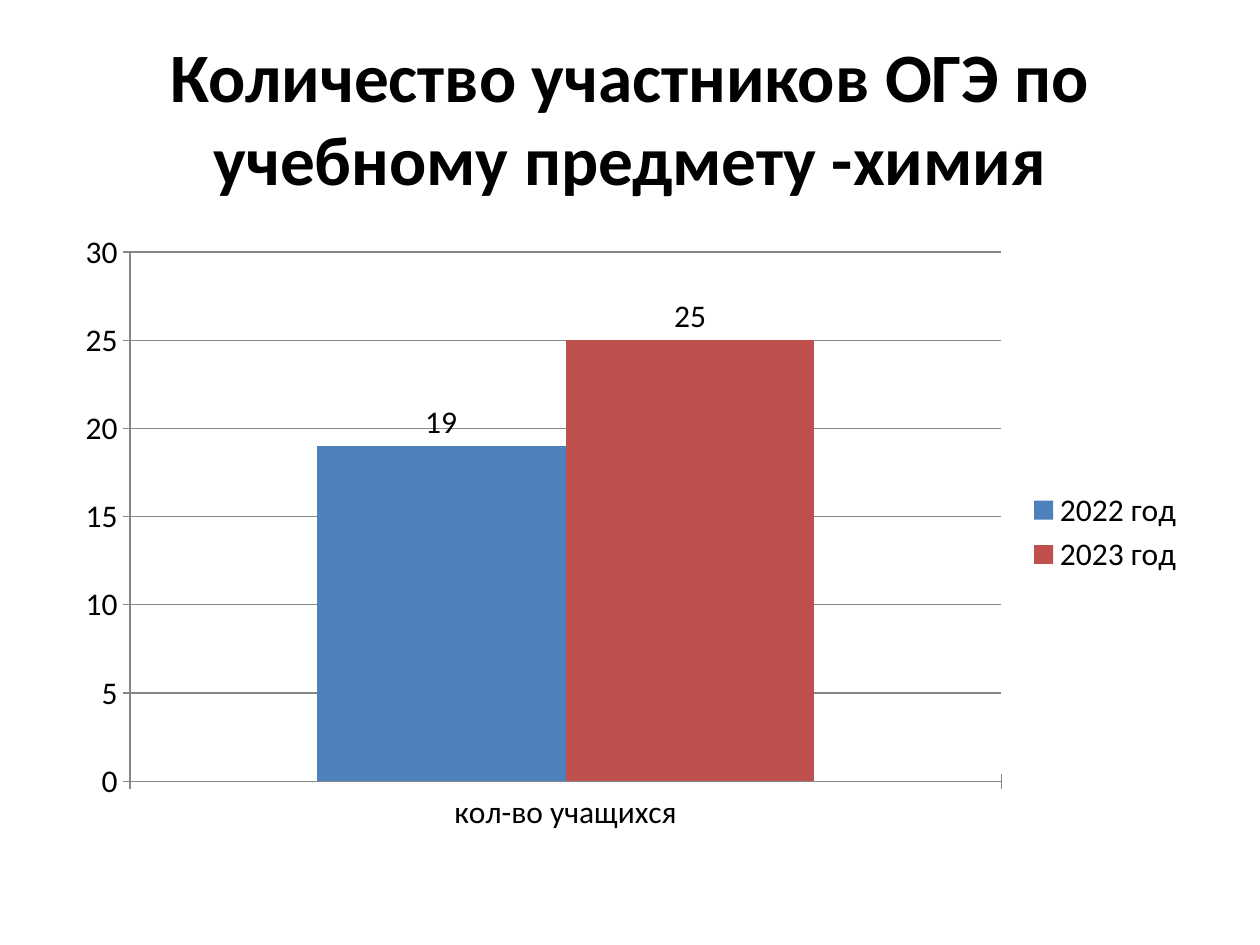
from dataclasses import dataclass
from typing import Any

from pptx import Presentation
from pptx import util as u
from pptx.chart.data import CategoryChartData
from pptx.dml.color import RGBColor
from pptx.enum import chart as ce
from pptx.enum import text

BLACK = RGBColor(0x00, 0x00, 0x00)
GRAY = RGBColor(0x86, 0x86, 0x86)
BLUE = RGBColor(0x4F, 0x81, 0xBD)
RED = RGBColor(0xC0, 0x50, 0x4D)

WIDTH, HEIGHT = u.Inches(10), u.Inches(7.5)
FONT = "Calibri"


@dataclass(frozen=True)
class Area:
    left: float
    top: float
    width: float
    height: float

    def lengths(self) -> dict[str, int]:
        return {
            "left": round(self.left * WIDTH),
            "top": round(self.top * HEIGHT),
            "width": round(self.width * WIDTH),
            "height": round(self.height * HEIGHT),
        }


@dataclass(frozen=True)
class Year:
    name: str
    count: int
    color: RGBColor


TITLE_AREA = Area(0.05, 0.04, 0.9, 1 / 6)
CHART_AREA = Area(0.05, 7 / 30, 0.9, 0.66)
YEARS = [Year("2022 год", 19, BLUE), Year("2023 год", 25, RED)]


def apply(target: Any, values: dict[str, Any]) -> None:
    for name, value in values.items():
        setattr(target, name, value)


def format_font(font: Any, size: float, bold: bool = False) -> None:
    apply(font, {"name": FONT, "size": u.Pt(size), "bold": bold})
    font.color.rgb = BLACK


def format_line(line: Any) -> None:
    line.color.rgb = GRAY
    line.width = u.Pt(0.75)


def write_title(page: Any, words: str) -> None:
    box = page.shapes.title
    apply(box, TITLE_AREA.lengths())
    apply(box.text_frame, {
        "text": words,
        "word_wrap": True,
        "auto_size": text.MSO_AUTO_SIZE.NONE,
        "vertical_anchor": text.MSO_ANCHOR.MIDDLE,
    })
    para = box.text_frame.paragraphs[0]
    para.alignment = text.PP_ALIGN.CENTER
    format_font(para.runs[0].font, 39.6, bold=True)


def draw_chart(page: Any, category: str, years: list[Year]) -> None:
    data = CategoryChartData()
    data.categories = [category]
    for year in years:
        data.add_series(year.name, [year.count])
    area = CHART_AREA.lengths()
    chart = page.shapes.add_chart(
        ce.XL_CHART_TYPE.COLUMN_CLUSTERED,
        area["left"], area["top"], area["width"], area["height"], data,
    ).chart
    format_font(chart.font, 18)
    apply(chart, {"has_title": False, "has_legend": True})
    apply(chart.legend, {
        "position": ce.XL_LEGEND_POSITION.RIGHT,
        "include_in_layout": False,
    })
    for axis in (chart.category_axis, chart.value_axis):
        axis.major_tick_mark = ce.XL_TICK_MARK.CROSS
        format_line(axis.format.line)
    apply(chart.value_axis, {
        "minimum_scale": 0,
        "maximum_scale": 30,
        "major_unit": 5,
        "has_major_gridlines": True,
    })
    format_line(chart.value_axis.major_gridlines.format.line)

    plot = chart.plots[0]
    apply(plot, {"gap_width": 150, "overlap": 0, "vary_by_categories": False})
    for series, year in zip(plot.series, years):
        series.format.fill.solid()
        series.format.fill.fore_color.rgb = year.color
        apply(series.data_labels, {
            "show_value": True,
            "position": ce.XL_LABEL_POSITION.OUTSIDE_END,
        })
        format_font(series.data_labels.font, 18)


def main() -> None:
    deck = Presentation()
    apply(deck, {"slide_width": WIDTH, "slide_height": HEIGHT})
    page = deck.slides.add_slide(deck.slide_layouts.get_by_name("Title Only"))
    write_title(page, "Количество участников ОГЭ по учебному предмету -химия")
    draw_chart(page, "кол-во учащихся", YEARS)
    deck.save("out.pptx")


if __name__ == "__main__":
    main()
